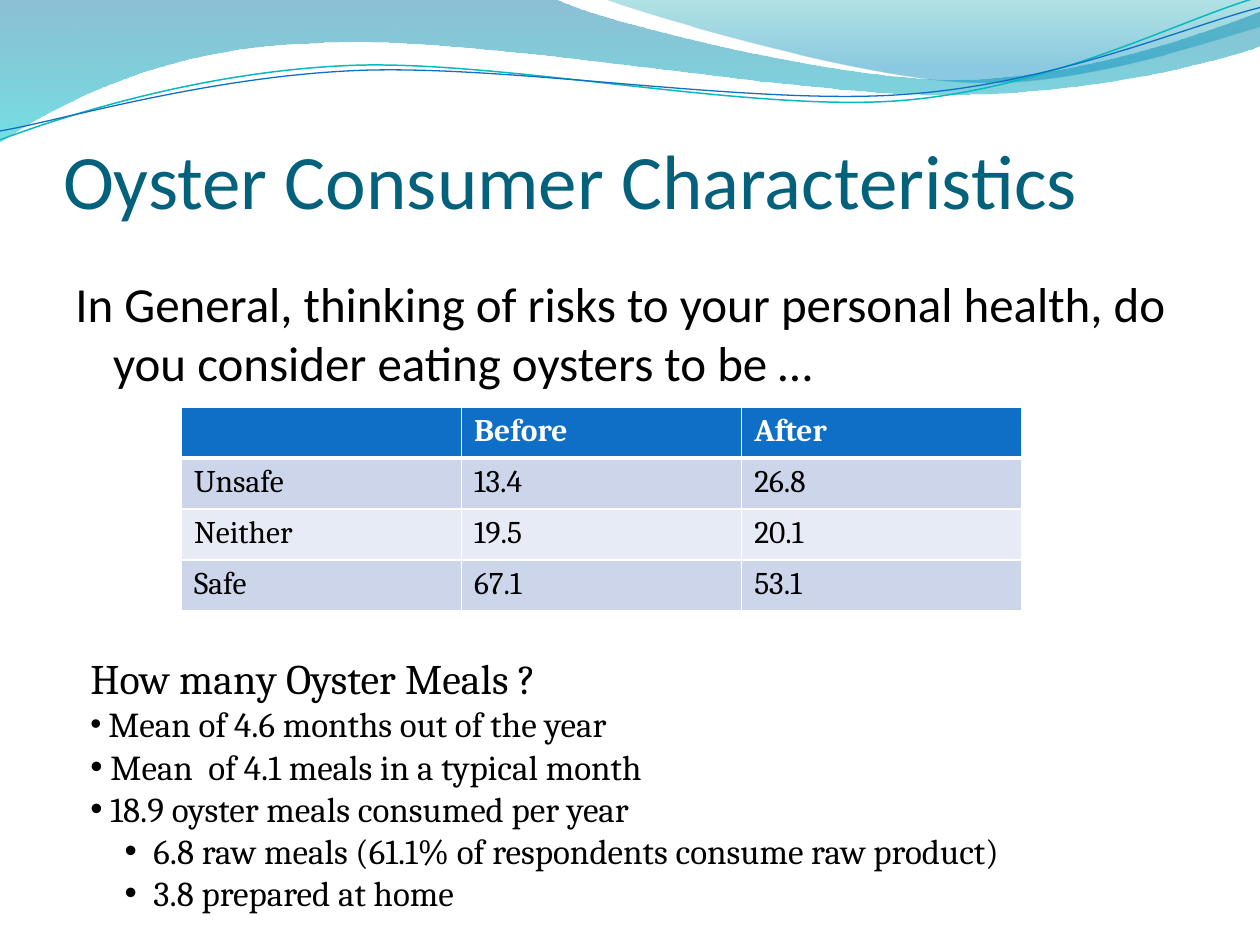
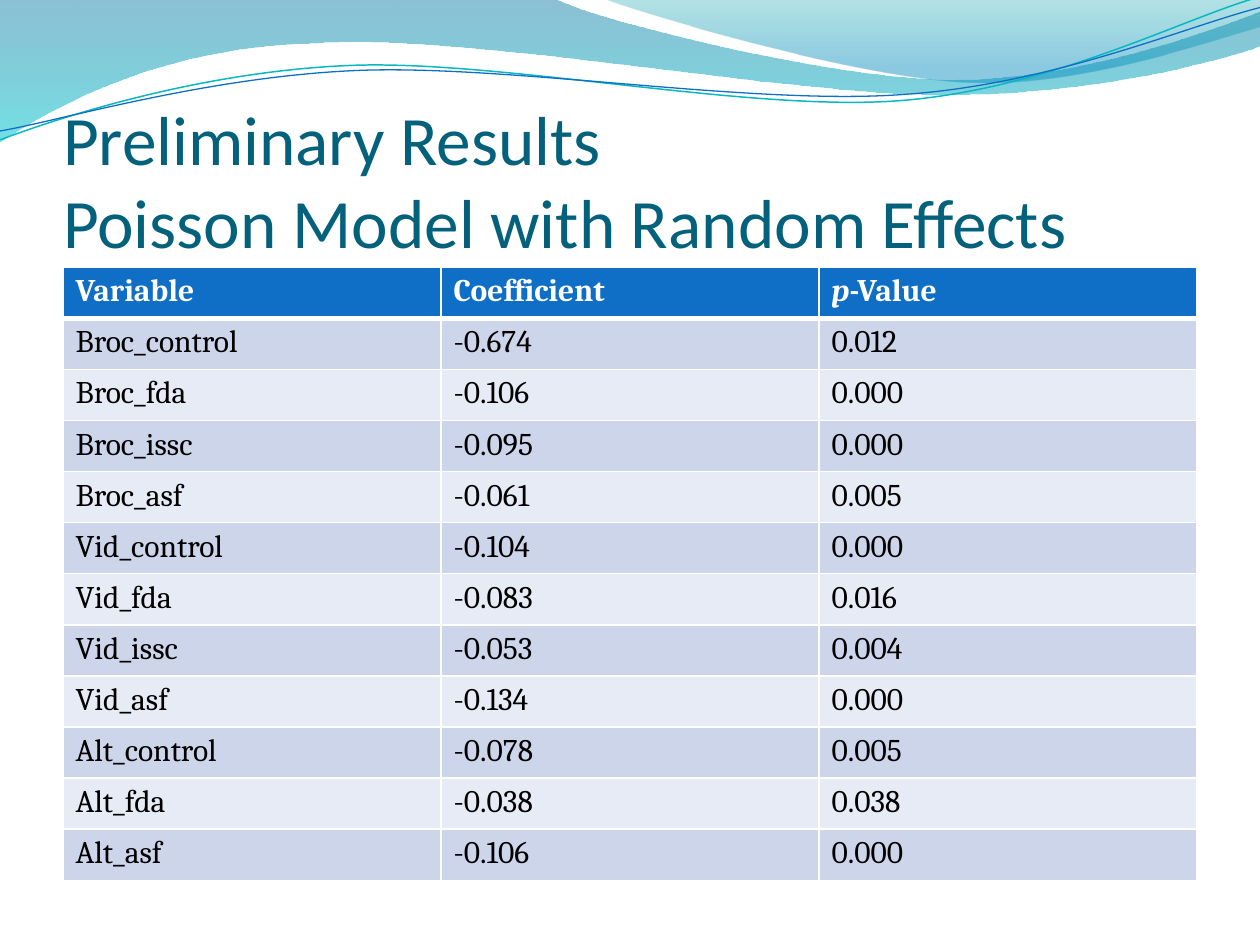
from math import cos, radians, sin

from lxml.etree import SubElement
from pptx import Presentation
from pptx.dml.color import RGBColor
from pptx.enum.text import MSO_ANCHOR, MSO_AUTO_SIZE, PP_ALIGN
from pptx.oxml.ns import qn
from pptx.util import Inches, Pt

HEAD, BODY = "Calibri", "Cambria"
BLACK, WHITE, TEAL = "000000", "FFFFFF", "04617B"
BLUE, AQUA = "0F6FC6", "0AB8BF"
BANDS = ("CCD5EA", "E7EBF5")
TILT = 2.7

# Waves: a start point, then lines (2 numbers) and curves (6 numbers)
BROAD = [(0, 0), (4.4, -0.01),
         (4.76, 0.17, 6.64, 0.63, 7.58, 0.63),
         (8.53, 0.63, 9.58, 0.26, 10, 0.09), (10.01, 0.36),
         (9.83, 0.44, 8.7, 0.76, 7.46, 0.75),
         (6.22, 0.75, 3.82, 0.28, 2.57, 0.34),
         (1.29, 0.36, 0.46, 0.83, -0.01, 1.13), (0, 0)]
SMALL = [(4.79, -0.01), (5.09, 0.11, 6.82, 0.62, 7.69, 0.65),
         (8.56, 0.69, 9.61, 0.32, 10, 0.21), (10, 0), (4.79, -0.01)]
UPPER = [(0, 1.11), (0.48, 0.93, 1.58, 0.57, 2.77, 0.52),
         (3.95, 0.47, 5.93, 0.89, 7.13, 0.8),
         (8.33, 0.71, 9.38, 0.15, 9.98, -0.02)]
LOWER = [(0, 1.04), (0.47, 0.96, 1.64, 0.61, 2.83, 0.56),
         (4.03, 0.51, 5.97, 0.84, 7.17, 0.75),
         (8.36, 0.67, 9.41, 0.21, 10, 0.06)]

RISKS = [["", "Before", "After"],
         ["Unsafe", "13.4", "26.8"],
         ["Neither", "19.5", "20.1"],
         ["Safe", "67.1", "53.1"]]
MODEL = [["Variable", "Coefficient", "p-Value"],
         ["Broc_control", "-0.674", "0.012"],
         ["Broc_fda", "-0.106", "0.000"],
         ["Broc_issc", "-0.095", "0.000"],
         ["Broc_asf", "-0.061", "0.005"],
         ["Vid_control", "-0.104", "0.000"],
         ["Vid_fda", "-0.083", "0.016"],
         ["Vid_issc", "-0.053", "0.004"],
         ["Vid_asf", "-0.134", "0.000"],
         ["Alt_control", "-0.078", "0.005"],
         ["Alt_fda", "-0.038", "0.038"],
         ["Alt_asf", "-0.106", "0.000"]]


def paint(color):
    return RGBColor.from_string(color)


def add_run(par, text, size, font=BODY, color=BLACK, bold=False, slant=False):
    run = par.add_run()
    run.text = text
    face = run.font
    face.size, face.name, face.bold, face.italic = Pt(size), font, bold, slant
    face.color.rgb = paint(color)


# Waves
def pairs(move):
    return list(zip(move[::2], move[1::2]))


def turn(moves, center, angle):
    """Turn every point of a wave clockwise about a center."""
    mid_x, mid_y = center
    c, s = cos(radians(angle)), sin(radians(angle))
    return [tuple(value for x, y in pairs(move)
                  for value in (mid_x + (x - mid_x) * c - (y - mid_y) * s,
                                mid_y + (x - mid_x) * s + (y - mid_y) * c))
            for move in moves]


def add_wave(slide, moves, closed):
    ends = [(Inches(move[-2]), Inches(move[-1])) for move in moves]
    pen = slide.shapes.build_freeform(*ends[0])
    pen.add_line_segments(ends[1:], close=closed)
    wave = pen.convert_to_shape()
    wave.shadow.inherit = False
    # Bend the straight segments that have control points
    lines = list(wave._element.iter(qn("a:lnTo")))
    for line, move in zip(lines, moves[1:]):
        if len(move) == 6:
            bend = SubElement(line.getparent(), qn("a:cubicBezTo"))
            for x, y in pairs(move):
                SubElement(bend, qn("a:pt"), x=str(Inches(x) - wave.left),
                           y=str(Inches(y) - wave.top))
            line.getparent().replace(line, bend)
    return wave


def add_band(slide, moves, stops):
    band = add_wave(slide, moves, True)
    band.line.fill.background()
    band.fill.gradient()
    band.fill.gradient_angle = 270
    for stop, (place, color, alpha) in zip(band.fill.gradient_stops, stops):
        stop.position = place
        stop.color.rgb = paint(color)
        tint = stop._gs.find(qn("a:srgbClr"))
        SubElement(tint, qn("a:alpha"), val=str(alpha * 1000))
    return band


def add_curve(slide, moves, center, color, width):
    curve = add_wave(slide, turn(moves, center, TILT), False)
    curve.rotation = 360 - TILT
    curve.fill.background()
    curve.line.color.rgb = paint(color)
    curve.line.width = Pt(width)
    return curve


def dress(layout, slide):
    """Draw the waves once and keep them on the shared layout."""
    waves = [add_band(slide, BROAD, [(0, "0074A1", 45), (1, "00C6CF", 55)]),
             add_band(slide, SMALL, [(0, "00A1A9", 30), (0.8, "008BBF", 45)]),
             add_curve(slide, UPPER, (4.99, 0.58), AQUA, 0.85),
             add_curve(slide, LOWER, (5, 0.59), BLUE, 0.75)]
    for number, wave in enumerate(waves, 20):
        wave._element.nvSpPr.cNvPr.set("id", str(number))
        layout.shapes._spTree.append(wave._element)


# Text
def set_title(slide, lines, size):
    title = slide.shapes.title
    title.left, title.top = Inches(0.5), Inches(0.77)
    title.width, title.height = Inches(9), Inches(1.25)
    frame = title.text_frame
    frame.margin_left = frame.margin_right = frame.margin_bottom = 0
    frame.margin_top = Inches(0.05)
    frame.vertical_anchor = MSO_ANCHOR.MIDDLE
    frame.auto_size = MSO_AUTO_SIZE.NONE
    par = frame.paragraphs[0]
    par.alignment = PP_ALIGN.LEFT
    for index, line in enumerate(lines):
        if index:
            par.add_line_break()
        add_run(par, line, size, HEAD, TEAL)


def add_box(slide, left, top, width, height):
    box = slide.shapes.add_textbox(Inches(left), Inches(top),
                                   Inches(width), Inches(height))
    box.text_frame.word_wrap = True
    return box.text_frame


def indent(par, left, first):
    props = par._p.get_or_add_pPr()
    props.set("marL", str(Inches(left)))
    props.set("indent", str(Inches(first)))
    return props


def add_point(frame, runs, level=0):
    par = frame.add_paragraph()
    par.level = level
    props = indent(par, 0.5 * level, -0.23 * level)
    SubElement(props, qn("a:buFont"), typeface="Arial")
    SubElement(props, qn("a:buChar"), char="•")
    for text, size in runs:
        add_run(par, text, size)


# Tables
def edge(cell, widths):
    props = cell._tc.get_or_add_tcPr()
    for side, width in zip("LRTB", widths):
        line = SubElement(props, qn("a:ln" + side), w=str(Pt(width)))
        fill = SubElement(line, qn("a:solidFill"))
        SubElement(fill, qn("a:srgbClr"), val=WHITE)


def fill_cell(cell, text, row):
    head = row == 0
    edge(cell, (1, 1, 3 if row == 1 else 1, 3 if head else 1))
    cell.fill.solid()
    cell.fill.fore_color.rgb = paint(BLUE if head else BANDS[(row - 1) % 2])
    par = cell.text_frame.paragraphs[0]
    color = WHITE if head else BLACK
    if text.startswith("p-"):
        add_run(par, "p", 18, color=color, bold=head, slant=True)
        text = text[1:]
    if text:
        add_run(par, text, 18, color=color, bold=head)


def add_grid(slide, rows, left, top, width, height):
    grid = slide.shapes.add_table(len(rows), len(rows[0]), Inches(left), Inches(top),
                                  Inches(width), Inches(height)).table
    for r, row in enumerate(rows):
        for c, text in enumerate(row):
            fill_cell(grid.cell(r, c), text, r)


# Slides
def add_traits(slide):
    set_title(slide, ["Oyster Consumer Characteristics"], 44)
    par = add_box(slide, 0.5, 2.12, 9, 3.8).paragraphs[0]
    par.space_before = Pt(5.6)
    indent(par, 0.3, -0.3)
    add_run(par, "In General, thinking of risks to your personal health, "
                 "do you consider eating oysters to be …", 28, HEAD)
    add_grid(slide, RISKS, 1.44, 3.23, 6.67, 1.62)

    meals = add_box(slide, 0.62, 5.13, 7.87, 2.19)
    meals.auto_size = MSO_AUTO_SIZE.SHAPE_TO_FIT_TEXT
    add_run(meals.paragraphs[0], "How many Oyster Meals ?", 24)
    add_point(meals, [(" ", 18), ("Mean of 4.6 months out of the year", 20)])
    add_point(meals, [(" Mean  of 4.1 meals in a typical month", 20)])
    add_point(meals, [(" 18.9 oyster meals consumed per year", 20)])
    for text in ("6.8 raw meals (61.1% of respondents consume raw product)",
                 "3.8 prepared at home"):
        add_point(meals, [(text, 20)], level=1)


def add_results(slide):
    set_title(slide, ["Preliminary Results",
                      "Poisson Model with Random Effects"], 39.6)
    add_grid(slide, MODEL, 0.5, 2.12, 9, 4.87)


def main():
    deck = Presentation()
    deck.slide_width, deck.slide_height = Inches(10), Inches(7.5)
    layout = deck.slide_layouts[5]
    traits, results = [deck.slides.add_slide(layout) for _ in range(2)]
    dress(layout, traits)
    add_traits(traits)
    add_results(results)
    deck.save("out.pptx")


if __name__ == "__main__":
    main()
